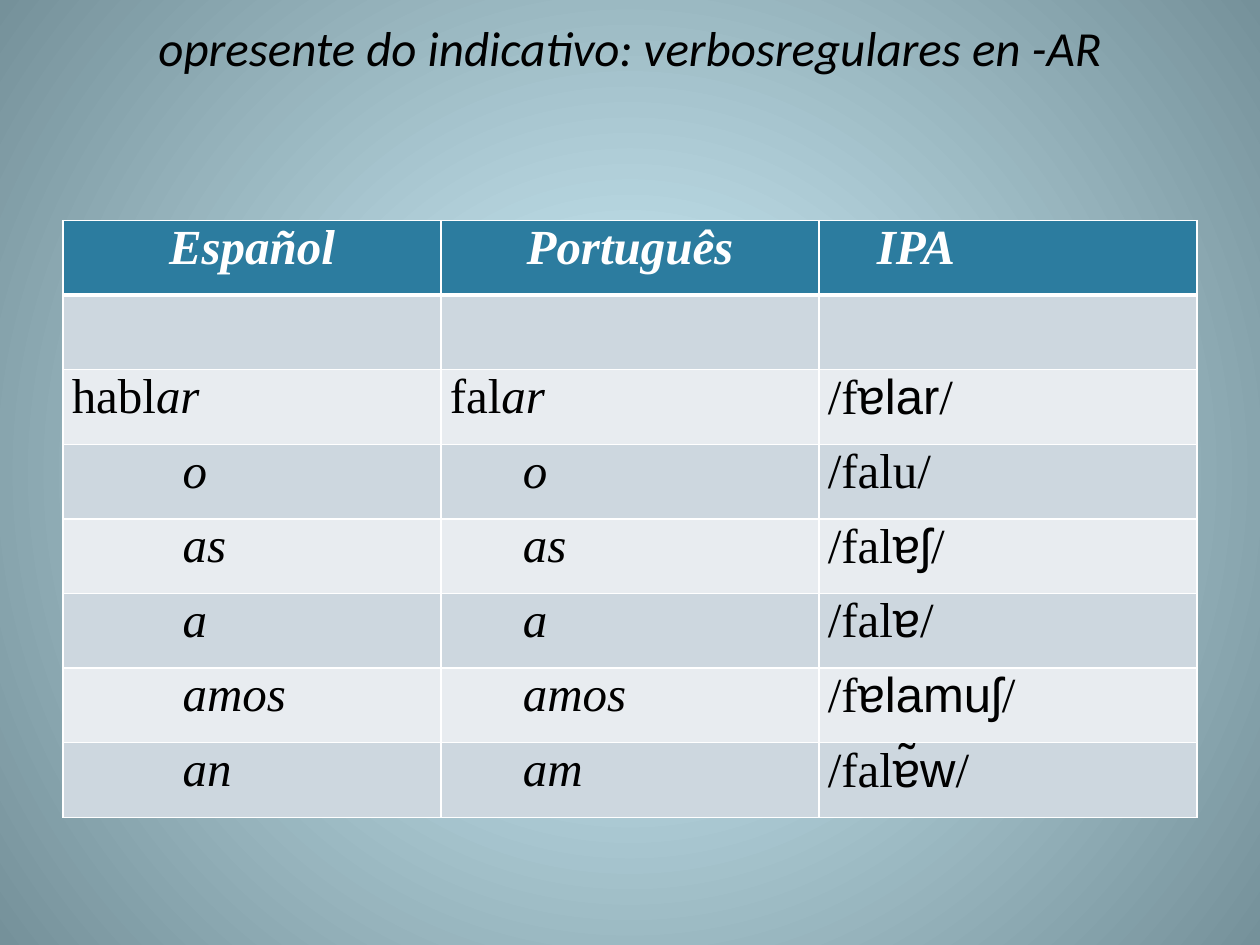
from lxml.etree import SubElement
from pptx import Presentation
from pptx.dml.color import RGBColor
from pptx.enum.text import MSO_ANCHOR, PP_ALIGN
from pptx.oxml.ns import qn
from pptx.util import Inches, Pt


def rgb(color):
    return RGBColor.from_string(color)


def add_border(cell, index, side, width):
    tcPr = cell._tc.get_or_add_tcPr()
    ln = SubElement(tcPr, qn(f"a:{side}"), w=str(Pt(width)))
    fill = SubElement(ln, qn("a:solidFill"))
    SubElement(fill, qn("a:srgbClr"), val="FFFFFF")
    tcPr.insert(index, ln)


prs = Presentation()
prs.slide_width, prs.slide_height = Inches(10), Inches(7.5)
s = prs.slides.add_slide(prs.slide_layouts[5])

bg = s.background.fill
bg.gradient()
for stop, (position, color) in zip(bg.gradient_stops, [(0, "D5F5FF"), (1, "75919A")]):
    stop.position = position
    stop.color.rgb = rgb(color)
grad = s.element.find(".//" + qn("a:gradFill"))
lin = grad.find(qn("a:lin"))
if lin is not None:
    grad.remove(lin)
circle = SubElement(grad, qn("a:path"), path="circle")
SubElement(circle, qn("a:fillToRect"), l="50000", t="50000", r="50000", b="50000")

title = s.shapes.title
title.left, title.top = Inches(0.5), Inches(0)
title.width, title.height = Inches(9), Inches(0.75)
tf = title.text_frame
tf.vertical_anchor = MSO_ANCHOR.MIDDLE
p = tf.paragraphs[0]
p.text = "opresente do indicativo: verbosregulares en -AR"
p.alignment = PP_ALIGN.CENTER
p.font.name, p.font.size, p.font.italic = "Calibri", Pt(28), True
p.font.color.rgb = rgb("000000")

SERIF, IPA = ("Times New Roman", False), ("Arial", False)
ITALIC = ("Times New Roman", True)
rows = [
    (["Español"], ["Português"], ["IPA"]),
    ([], [], []),
    (["habl", "ar"], ["fal", "ar"], ["/f", "ɐlar", "/"]),
    (["o"], ["o"], ["/falu/"]),
    (["as"], ["as"], ["/fal", "ɐʃ", "/"]),
    (["a"], ["a"], ["/fal", "ɐ", "/"]),
    (["amos"], ["amos"], ["/f", "ɐlamuʃ", "/"]),
    (["an"], ["am"], ["/fal", "ɐ̃w", "/"]),
]
ending_indents = [0.88, 0.58, 0]

table = s.shapes.add_table(len(rows), 3, Inches(0.5), Inches(1.75), Inches(9), Inches(4.74)).table
for row in table.rows:
    row.height = Inches(4.74 / len(rows))

for i, row in enumerate(rows):
    for j, parts in enumerate(row):
        cell = table.cell(i, j)
        cell.margin_left = cell.margin_right = Inches(0.07)
        cell.margin_top = cell.margin_bottom = 0
        cell.fill.solid()
        cell.fill.fore_color.rgb = rgb("2C7C9F" if i == 0 else "CDD7DF" if i % 2 else "E8ECF0")
        widths = {"lnL": 1, "lnR": 1, "lnT": 3 if i == 1 else 1, "lnB": 3 if i == 0 else 1}
        for index, (side, width) in enumerate(widths.items()):
            add_border(cell, index, side, width)

        p = cell.text_frame.paragraphs[0]
        indent = 0
        if i == 0:
            styles = [ITALIC]
            if j < 2:
                p.alignment = PP_ALIGN.CENTER
            else:
                indent = 0.39
        elif j == 2:
            styles = [SERIF, IPA, SERIF]
        elif len(parts) == 2:
            styles = [SERIF, ITALIC]
        else:
            styles = [ITALIC]
            indent = ending_indents[j]
        if parts and indent:
            p._p.get_or_add_pPr().set("marL", str(Inches(indent)))
        p.font.size, p.font.bold = Pt(28), i == 0
        p.font.color.rgb = rgb("FFFFFF" if i == 0 else "000000")
        for text, (font, italic) in zip(parts, styles):
            r = p.add_run()
            r.text = text
            r.font.name, r.font.italic = font, italic

prs.save("out.pptx")
